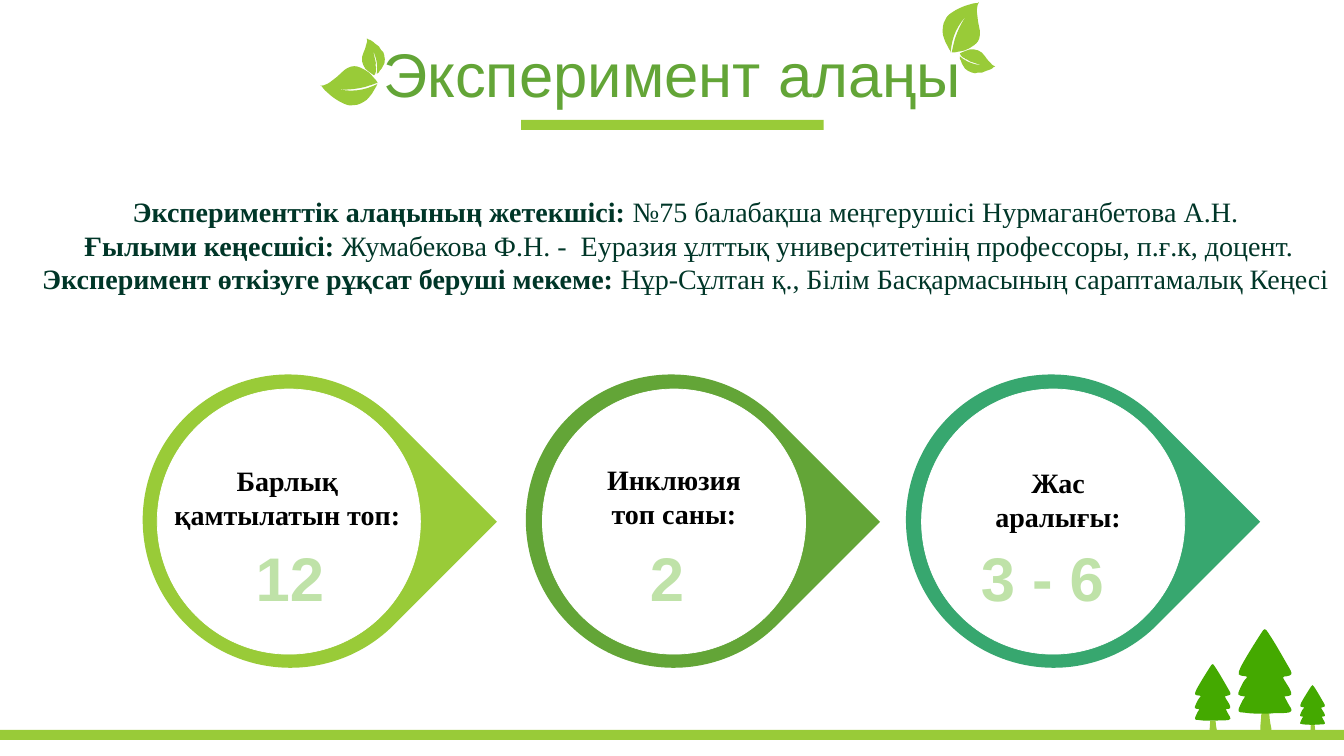
from dataclasses import dataclass
from math import cos, radians, sin

from pptx import Presentation
from pptx.dml.color import RGBColor
from pptx.enum.shapes import MSO_SHAPE
from pptx.enum.text import MSO_ANCHOR, MSO_AUTO_SIZE, PP_ALIGN
from pptx.oxml import parse_xml
from pptx.oxml.ns import nsdecls, qn
from pptx.shapes.autoshape import Shape
from pptx.slide import Slide
from pptx.text.text import TextFrame
from pptx.util import Inches, Pt

Curve = tuple[int, int, int, int, int, int]
Run = tuple[str, bool]
Box = tuple[float, float, float, float]


@dataclass(frozen=True)
class Theme:
    lime: str = "99CB38"
    green: str = "63A537"
    teal: str = "37A76F"
    tree: str = "44A900"
    dark: str = "003628"
    pale: str = "BFE2A8"
    black: str = "000000"
    white: str = "FFFFFF"
    sans: str = "Arial"
    serif: str = "Times New Roman"
    large: int = 44
    body: int = 20


THEME = Theme()


@dataclass(frozen=True)
class Outline:
    """A closed run of Bézier curves, in hundredths of an inch from its anchor."""
    start: tuple[int, int]
    curves: tuple[Curve, ...]


@dataclass(frozen=True)
class Placement:
    x: float
    y: float
    scale: float = 1.0
    angle: float = 0.0


@dataclass(frozen=True)
class Drop:
    left: float
    hole_left: float
    color: str
    label: str
    label_box: Box
    value: str
    value_box: Box
    wrap_value: bool = True


LARGE_LEAF = Outline((0, 0), (
    (1, -16, 7, -28, 18, -39), (17, -38, 17, -38, 17, -38), (11, -31, 7, -22, 4, -13),
    (3, -9, 2, -5, 1, 0), (2, 0, 3, 0, 4, 0), (8, -1, 11, -1, 14, -2), (17, -3, 20, -5, 23, -7),
    (25, -8, 26, -10, 27, -11), (28, -13, 29, -15, 29, -18), (29, -20, 29, -23, 28, -26),
    (28, -28, 28, -29, 27, -31), (27, -34, 26, -37, 26, -40), (26, -41, 26, -42, 26, -43),
    (26, -46, 27, -48, 28, -50), (27, -50, 27, -50, 27, -49), (23, -49, 20, -48, 17, -47),
    (13, -46, 9, -44, 5, -42), (2, -40, -2, -38, -4, -35), (-5, -33, -6, -31, -7, -29),
    (-8, -26, -8, -24, -8, -21), (-8, -19, -8, -17, -7, -15), (-6, -12, -5, -9, -3, -6),
    (-2, -4, -1, -2, 0, -1), (0, -1, 0, -1, 0, 0),
))
SMALL_LEAF = Outline((35, 13), (
    (25, 13, 16, 10, 9, 4), (9, 6, 9, 7, 10, 8), (10, 9, 10, 10, 11, 11), (12, 13, 13, 14, 14, 16),
    (16, 18, 18, 19, 21, 20), (23, 21, 25, 21, 27, 20), (28, 20, 30, 20, 31, 20),
    (33, 19, 34, 19, 36, 18), (37, 18, 39, 17, 41, 16), (42, 15, 43, 14, 44, 14),
    (42, 13, 40, 12, 39, 10), (37, 8, 35, 6, 34, 4), (32, 1, 30, -1, 27, -2),
    (25, -3, 22, -3, 19, -3), (16, -2, 13, -1, 11, 0), (10, 1, 10, 1, 9, 1), (9, 2, 9, 2, 10, 3),
    (10, 3, 11, 4, 12, 5), (13, 5, 14, 6, 15, 7), (16, 7, 16, 7, 16, 7), (17, 8, 18, 8, 19, 9),
    (22, 10, 25, 11, 28, 12), (30, 13, 33, 13, 35, 13),
))
CROWN = Outline((-4, 0), (
    (-9, 0, -15, 0, -21, -1), (-27, -1, -28, -2, -25, -8), (-24, -11, -22, -14, -20, -17),
    (-28, -18, -28, -18, -25, -25), (-24, -27, -23, -29, -22, -31), (-21, -33, -19, -35, -18, -36),
    (-19, -37, -19, -37, -19, -37), (-28, -38, -28, -38, -24, -47), (-18, -58, -11, -69, -4, -80),
    (-1, -85, 0, -85, 3, -80), (11, -68, 18, -55, 25, -43), (27, -39, 26, -38, 21, -37),
    (17, -37, 17, -36, 19, -33), (21, -30, 22, -28, 24, -25), (27, -18, 27, -18, 19, -17),
    (21, -13, 23, -9, 25, -6), (27, -3, 26, -2, 23, -1), (17, 0, 10, -1, 4, 0), (1, 1, -1, 1, -4, 0),
))
TRUNK = Outline((-4, 0), (
    (-1, 0, 1, 0, 4, 0), (4, 5, 5, 10, 6, 15), (6, 19, 4, 21, 0, 21),
    (-3, 22, -6, 19, -5, 15), (-5, 10, -4, 5, -4, 0),
))

TREES = (Placement(12.55, 7.08), Placement(13.02, 7.19, 0.47), Placement(12.03, 7.15, 0.67))
SPRIGS = (Placement(9.43, 0.52), Placement(3.75, 0.83, angle=238.6))
DROPS = (
    Drop(8.98, 9.14, THEME.teal, "Жас аралығы:", (9.56, 4.57, 1.87, 0.77),
         "3 - 6", (9.62, 5.31, 1.44, 0.84), wrap_value=False),
    Drop(5.21, 5.38, THEME.green, "Инклюзия топ саны:", (5.75, 4.54, 1.87, 0.77),
         "2", (5.98, 5.31, 1.27, 0.84)),
    Drop(1.41, 1.56, THEME.lime, "Барлық қамтылатын топ:", (1.42, 4.55, 2.86, 0.77),
         "12", (2.24, 5.31, 1.27, 0.84)),
)
DETAILS: tuple[tuple[Run, ...], ...] = (
    (("Эксперименттік алаңының жетекшісі: ", True),
     ("№75 балабақша меңгерушісі Нурмаганбетова А.Н.\n", False), (" Ғылыми кеңесшісі: ", True),
     ("Жумабекова Ф.Н. -  Еуразия ұлттық университетінің профессоры, п.ғ.к, доцент.", False)),
    (("Эксперимент өткізуге рұқсат беруші мекеме: ", True),
     ("Нұр-Сұлтан қ., Білім Басқармасының сараптамалық Кеңесі", False)),
)


def paint(shape: Shape, color: str, line: str | None = None) -> None:
    shape.shadow.inherit = False
    shape.fill.solid()
    shape.fill.fore_color.rgb = RGBColor.from_string(color)
    if line is None:
        shape.line.fill.background()
    else:
        shape.line.color.rgb = RGBColor.from_string(line)
        shape.line.width = Pt(0.5)


def add_preset(slide: Slide, kind: MSO_SHAPE, box: Box, color: str, line: str | None = None) -> Shape:
    shape = slide.shapes.add_shape(kind, *map(Inches, box))
    paint(shape, color, line)
    return shape


def add_outline(slide: Slide, outline: Outline, place: Placement, color: str) -> None:
    """Draw an outline scaled and turned about its anchor, each segment bent into its curve."""
    cosine, sine = cos(radians(place.angle)), sin(radians(place.angle))

    def locate(x: float, y: float) -> tuple[int, int]:
        factor = place.scale / 100
        return (Inches(place.x + factor * (x * cosine - y * sine)),
                Inches(place.y + factor * (x * sine + y * cosine)))

    builder = slide.shapes.build_freeform(*locate(*outline.start))
    builder.add_line_segments([locate(*curve[4:]) for curve in outline.curves], close=True)
    shape = builder.convert_to_shape()
    for segment, curve in zip(list(shape.element.iter(qn("a:lnTo"))), outline.curves):
        points = (locate(*curve[index:index + 2]) for index in (0, 2, 4))
        marks = "".join(f'<a:pt x="{x - shape.left}" y="{y - shape.top}"/>' for x, y in points)
        bend = parse_xml(f'<a:cubicBezTo {nsdecls("a")}>{marks}</a:cubicBezTo>')
        segment.getparent().replace(segment, bend)
    paint(shape, color)


def write_text(frame: TextFrame, lines: tuple[tuple[Run, ...], ...], *, size: int, font: str,
               color: str, outline: str | None = None) -> None:
    for index, runs in enumerate(lines):
        paragraph = frame.add_paragraph() if index else frame.paragraphs[0]
        paragraph.alignment = PP_ALIGN.CENTER
        for text, bold in runs:
            run = paragraph.add_run()
            run.text = text.rstrip("\n")
            run.font.size, run.font.name, run.font.bold = Pt(size), font, bold
            run.font.color.rgb = RGBColor.from_string(color)
            if text.endswith("\n"):
                paragraph.add_line_break()
            if outline:
                run.font._element.insert(0, parse_xml(
                    f'<a:ln {nsdecls("a")} w="{Pt(1.75)}"><a:solidFill>'
                    f'<a:srgbClr val="{outline}"/></a:solidFill></a:ln>'))


def add_text_frame(slide: Slide, box: Box, wrap: bool = True) -> TextFrame:
    frame = slide.shapes.add_textbox(*map(Inches, box)).text_frame
    frame.word_wrap, frame.auto_size = wrap, MSO_AUTO_SIZE.SHAPE_TO_FIT_TEXT
    return frame


def add_title(slide: Slide, text: str) -> None:
    title = slide.shapes.title
    title.left, title.top, title.width, title.height = map(Inches, (0.34, 0.37, 12.66, 0.79))
    title.text_frame.vertical_anchor = MSO_ANCHOR.MIDDLE
    write_text(title.text_frame, (((text, False),),), size=THEME.large, font=THEME.sans, color=THEME.green)
    paragraph = title.text_frame.paragraphs[0]
    paragraph.line_spacing, paragraph.space_before = 0.9, Pt(10)


def add_drop(slide: Slide, drop: Drop) -> None:
    add_preset(slide, MSO_SHAPE.TEAR, (drop.left, 3.72, 2.92, 2.9), drop.color).rotation = 45
    add_preset(slide, MSO_SHAPE.OVAL, (drop.hole_left, 3.86, 2.61, 2.63), THEME.white, THEME.white)
    write_text(add_text_frame(slide, drop.label_box), (((drop.label, True),),),
               size=THEME.body, font=THEME.serif, color=THEME.black)


def main() -> None:
    presentation = Presentation()
    presentation.slide_width, presentation.slide_height = Inches(13.33), Inches(7.5)
    slide = presentation.slides.add_slide(presentation.slide_layouts[5])
    for outlines, places in ((((CROWN, THEME.tree), (TRUNK, THEME.lime)), TREES),
                             (((LARGE_LEAF, THEME.lime), (SMALL_LEAF, THEME.lime)), SPRIGS)):
        for place in places:
            for outline, color in outlines:
                add_outline(slide, outline, place, color)
    for bar in ((5.17, 1.19, 3, 0.1), (0, 7.24, 13.33, 0.1)):
        add_preset(slide, MSO_SHAPE.RECTANGLE, bar, THEME.lime)
    add_title(slide, "Эксперимент алаңы")
    for drop in DROPS:
        add_drop(slide, drop)
    write_text(add_text_frame(slide, (-0.03, 1.88, 13.66, 1.11)), DETAILS,
               size=THEME.body, font=THEME.serif, color=THEME.dark)
    for drop in DROPS:
        write_text(add_text_frame(slide, drop.value_box, drop.wrap_value), (((drop.value, True),),),
                   size=THEME.large, font=THEME.sans, color=THEME.pale, outline=THEME.green)
    presentation.save("out.pptx")


if __name__ == "__main__":
    main()
